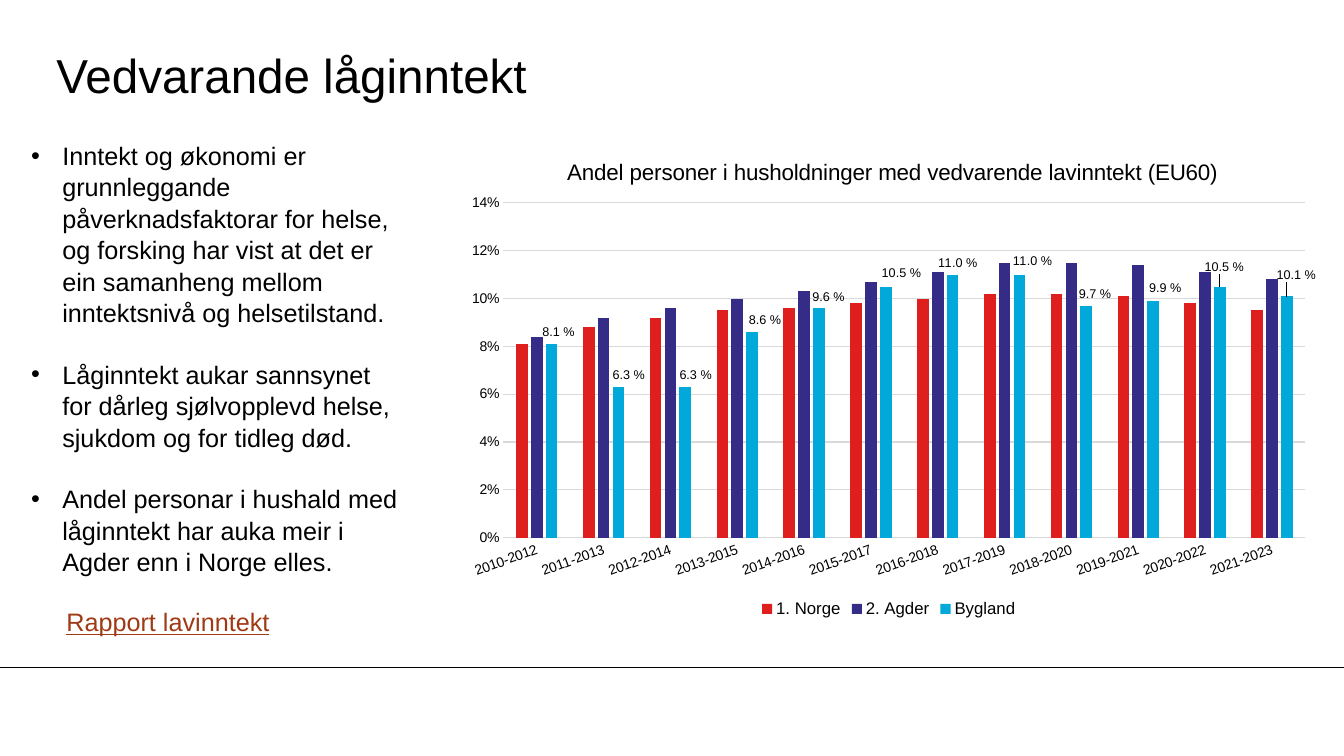
"""Build the slide on persistent low income, with a chart of Norway, Agder and Bygland."""
from pptx import Presentation, util as u
from pptx.chart.data import CategoryChartData
from pptx.dml.color import RGBColor
from pptx.enum import chart as ch, shapes, text
from pptx.oxml import parse_xml
from pptx.oxml.ns import nsdecls, qn
from lxml import etree

THEME = {
    "font": "Arial", "ink": "000000", "grid": "D9D9D9", "link": "9F3A14",
    "regions": ["DF1F1D", "342C86", "00A9DA"],
    "title": 34, "body": 18, "heading": 16, "legend": 12, "axis": 10, "value": 9,
}


def style(font, size, colour="ink"):
    font.name, font.size, font.bold = THEME["font"], u.Pt(THEME[size]), False
    font.color.rgb = RGBColor.from_string(THEME[colour])


def manual_layout(x, y, extra=""):
    return parse_xml(
        f'<c:layout {nsdecls("c")}><c:manualLayout>{extra}'
        f'<c:x val="{x:.4f}"/><c:y val="{y:.4f}"/></c:manualLayout></c:layout>')


deck = Presentation()
deck.slide_width, deck.slide_height = u.Inches(13.33), u.Inches(7.5)
slide = deck.slides.add_slide(deck.slide_layouts[6])
margin = u.Inches(0.56)

footer_y = u.Inches(6.62)
footer_rule = slide.shapes.add_connector(
    shapes.MSO_CONNECTOR.STRAIGHT, 0, footer_y, deck.slide_width, footer_y)
footer_rule.line.color.rgb = RGBColor.from_string(THEME["ink"])
footer_rule.line.width = u.Pt(0.75)
etree.SubElement(footer_rule._element.spPr, qn("a:effectLst"))

heading = slide.shapes.add_textbox(margin, u.Inches(0.36), u.Inches(11.1), u.Inches(0.75)).text_frame
heading.word_wrap = True
heading.vertical_anchor = text.MSO_ANCHOR.MIDDLE
heading.margin_left = heading.margin_right = heading.margin_top = heading.margin_bottom = 0
heading.text = "Vedvarande låginntekt"
style(heading.paragraphs[0].font, "title")

findings = [
    "Inntekt og økonomi er grunnleggande påverknadsfaktorar for helse, og forsking har vist "
    "at det er ein samanheng mellom inntektsnivå og helsetilstand.",
    "Låginntekt aukar sannsynet for dårleg sjølvopplevd helse, sjukdom og for tidleg død.",
    "Andel personar i hushald med låginntekt har auka meir i Agder enn i Norge elles.",
]
bullets = slide.shapes.add_textbox(u.Inches(0.21), u.Inches(1.33), u.Inches(3.92), u.Inches(4.34)).text_frame
bullets.word_wrap = True
bullets.text = "\n".join(findings)
for i, finding in enumerate(bullets.paragraphs):
    props = finding._p.get_or_add_pPr()
    props.set("marL", str(u.Inches(0.31)))
    props.set("indent", str(-u.Inches(0.31)))
    etree.SubElement(props, qn("a:buFont")).set("typeface", THEME["font"])
    etree.SubElement(props, qn("a:buChar")).set("char", "•")
    finding.line_spacing = 1.04
    if i:
        finding.space_before = u.Pt(21.6)
    style(finding.font, "body")

report = slide.shapes.add_textbox(margin, u.Inches(5.97), u.Inches(2.65), u.Inches(0.4)).text_frame
report.word_wrap = True
report.text = "Rapport lavinntekt"
report_run = report.paragraphs[0].runs[0]
style(report_run.font, "body", "link")
report_run.font.underline = True

shares = {
    "1. Norge": [8.1, 8.8, 9.2, 9.5, 9.6, 9.8, 10, 10.2, 10.2, 10.1, 9.8, 9.5],
    "2. Agder": [8.4, 9.2, 9.6, 10, 10.3, 10.7, 11.1, 11.5, 11.5, 11.4, 11.1, 10.8],
    "Bygland": [8.1, 6.3, 6.3, 8.6, 9.6, 10.5, 11, 11, 9.7, 9.9, 10.5, 10.1],
}
income = CategoryChartData(number_format="0%")
income.categories = [f"{year}-{year + 2}" for year in range(2010, 2022)]
for region, percents in shares.items():
    income.add_series(region, [round(percent / 100, 3) for percent in percents])
chart = slide.shapes.add_chart(
    ch.XL_CHART_TYPE.COLUMN_CLUSTERED, u.Inches(4.51), u.Inches(1.32),
    u.Inches(8.61), u.Inches(4.85), income).chart
style(chart.font, "axis")

chart.has_title = True
chart.chart_title.text_frame.text = "Andel personer i husholdninger med vedvarende lavinntekt (EU60)"
style(chart.chart_title.text_frame.paragraphs[0].runs[0].font, "heading")
chart.chart_title.include_in_layout = False
title_xml = chart.chart_title._element
for old in title_xml.findall(qn("c:layout")):
    title_xml.remove(old)
title_xml.find(qn("c:tx")).addnext(manual_layout(0.125, 0.043))

plot_area = chart._chartSpace.chart.plotArea
for old in plot_area.findall(qn("c:layout")):
    plot_area.remove(old)
plot_layout = manual_layout(0.056, 0.143, '<c:layoutTarget val="inner"/><c:xMode val="edge"/><c:yMode val="edge"/>')
for side, share in (("c:w", 0.924), ("c:h", 0.685)):
    etree.SubElement(plot_layout[0], qn(side)).set("val", str(share))
plot_area.insert(0, plot_layout)
title_box = title_xml.find(qn("c:layout"))[0]
for n, mode in enumerate(("c:xMode", "c:yMode")):
    edge = etree.Element(qn(mode))
    edge.set("val", "edge")
    title_box.insert(n, edge)

chart.has_legend = True
chart.legend.position = ch.XL_LEGEND_POSITION.BOTTOM
chart.legend.include_in_layout = False
style(chart.legend.font, "legend")

periods, percent_axis = chart.category_axis, chart.value_axis
for axis in (periods, percent_axis):
    axis.major_tick_mark = axis.minor_tick_mark = ch.XL_TICK_MARK.NONE
    style(axis.tick_labels.font, "axis")
periods._element.find(qn("c:txPr")).find(qn("a:bodyPr")).set("rot", str(-20 * 60000))
percent_axis.minimum_scale, percent_axis.maximum_scale, percent_axis.major_unit = 0, 0.14, 0.02
percent_axis.tick_labels.number_format = "0%"
percent_axis.tick_labels.number_format_is_linked = False
percent_axis.format.line.fill.background()
for line in (periods.format.line, percent_axis.major_gridlines.format.line):
    line.color.rgb = RGBColor.from_string(THEME["grid"])
    line.width = u.Pt(0.75)

plot = chart.plots[0]
plot.gap_width, plot.overlap, plot.vary_by_categories = 219, -27, False
for region, colour in zip(plot.series, THEME["regions"]):
    region.format.fill.solid()
    region.format.fill.fore_color.rgb = RGBColor.from_string(colour)
    region.invert_if_negative = False

bygland = plot.series[2]
values = bygland.data_labels
values.show_value = True
values.number_format, values.number_format_is_linked = "0.0\\ %", False
style(values.font, "value")
label_shifts = [(8, 0), (12, 0), (12, 0), (15, 0), (11, 0), (18, -4),
                (6, 0), (15, -4), (10, 0), (14, -2), (5, -16), (11, -20)]
for i, (right, down) in enumerate(label_shifts):
    label = bygland.points[i].data_label
    style(label.font, "value")
    label.position = ch.XL_LABEL_POSITION.OUTSIDE_END
    label_xml = values._element.findall(qn("c:dLbl"))[i]
    label_xml.insert(1, manual_layout(right / 1000, down / 1000))
    label_xml.insert(2, parse_xml(
        f'<c:numFmt {nsdecls("c")} formatCode="0.0\\ %" sourceLinked="0"/>'))

deck.save("out.pptx")
